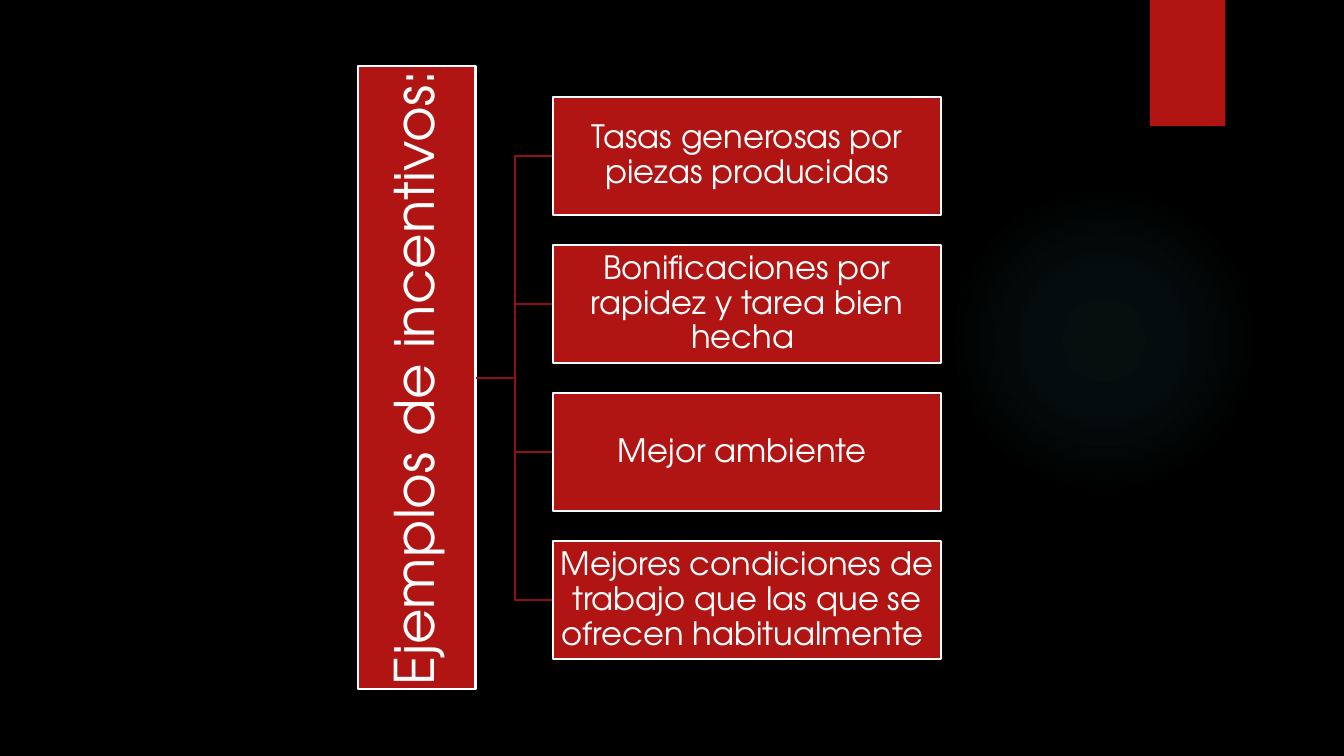
from lxml.etree import SubElement
from pptx import Presentation
from pptx.dml.color import RGBColor
from pptx.enum.shapes import MSO_CONNECTOR, MSO_SHAPE
from pptx.enum.text import MSO_ANCHOR, MSO_AUTO_SIZE, PP_ALIGN
from pptx.oxml import parse_xml
from pptx.oxml.ns import nsdecls, qn
from pptx.util import Cm, Pt

BLACK = RGBColor(0x00, 0x00, 0x00)
WHITE = RGBColor(0xFF, 0xFF, 0xFF)
RED = RGBColor(0xB0, 0x15, 0x13)
DARK = RGBColor(0x8D, 0x11, 0x0F)
TEAL = RGBColor(0x50, 0xB9, 0xC1)

FRAME = {"word_wrap": True, "auto_size": MSO_AUTO_SIZE.NONE,
         "vertical_anchor": MSO_ANCHOR.MIDDLE}
SIDES = ("margin_left", "margin_top", "margin_right", "margin_bottom")
PARA = {"alignment": PP_ALIGN.CENTER, "line_spacing": 0.9}
FONT = {"name": "TeX Gyre Adventor", "bold": False}


def assign(item, values):
    for key, value in values.items():
        setattr(item, key, value)


class Board:
    def __init__(self, slide):
        self.slide = slide
        self.shapes = slide.shapes
        slide.background.fill.solid()
        slide.background.fill.fore_color.rgb = BLACK

    def shape(self, kind, left, top, width, height):
        shape = self.shapes.add_shape(kind, Cm(left), Cm(top), Cm(width), Cm(height))
        shape.shadow.inherit = False
        shape.line.fill.background()
        return shape

    def paint(self, shape, edge=None):
        shape.fill.solid()
        shape.fill.fore_color.rgb = RED
        if edge is not None:
            shape.line.color.rgb = edge
            shape.line.width = Pt(1.5)

    def glow(self, left, top, size, stops):
        shape = self.shape(MSO_SHAPE.OVAL, left, top, size, size)
        marks = "".join(
            f'<a:gs pos="{place * 1000}"><a:srgbClr val="{TEAL}">'
            f'<a:alpha val="{alpha * 1000}"/></a:srgbClr></a:gs>'
            for place, alpha in stops)
        grad = parse_xml(
            f'<a:gradFill {nsdecls("a")}><a:gsLst>{marks}</a:gsLst><a:path path="circle">'
            '<a:fillToRect l="50000" t="50000" r="50000" b="50000"/></a:path></a:gradFill>')
        shape.element.spPr.find(qn("a:prstGeom")).addnext(grad)

    def label(self, shape, text, size, inset):
        frame = shape.text_frame
        assign(frame, FRAME | dict.fromkeys(SIDES, Cm(inset)))
        frame.text = text
        para = frame.paragraphs[0]
        assign(para, PARA)
        assign(para.font, FONT | {"size": Pt(size)})
        para.font.color.rgb = WHITE

    def box(self, text, left, top, width, height):
        shape = self.shape(MSO_SHAPE.RECTANGLE, left, top, width, height)
        self.paint(shape, WHITE)
        self.label(shape, text, 23, 0.05)

    def title(self, text, left, top, width, height):
        shape = self.shapes.title
        assign(shape, {"left": Cm(left), "top": Cm(top), "width": Cm(width),
                       "height": Cm(height), "rotation": 270})
        self.paint(shape, WHITE)
        self.label(shape, text, 39, 0.08)

    def link(self, left, top, right, end):
        line = self.shapes.add_connector(
            MSO_CONNECTOR.ELBOW, Cm(left), Cm(top), Cm(right), Cm(end))
        line.line.color.rgb = DARK
        line.line.width = Pt(1.5)
        SubElement(line.element.spPr, qn("a:effectLst"))


def main():
    deck = Presentation()
    deck.slide_width, deck.slide_height = Cm(33.87), Cm(19.05)
    board = Board(deck.slides.add_slide(deck.slide_layouts[5]))

    board.glow(23.9, 4.65, 7.82, [(0, 7), (36, 6), (69, 0)])
    board.paint(board.shape(MSO_SHAPE.RECTANGLE, 28.98, 0, 1.9, 3.18))

    items = ["Tasas generosas por piezas producidas",
             "Bonificaciones por rapidez y tarea bien hecha ",
             "Mejor ambiente ",
             "Mejores condiciones de trabajo que las que se ofrecen habitualmente "]
    left, top, width, height, step = 13.94, 2.44, 9.78, 2.97, 3.73
    start, middle = 12, 9.52
    tops = [top + step * i for i in range(len(items))]

    for y in tops:
        board.link(start, middle, left, y + height / 2)
    board.title("Ejemplos de incentivos: ", 2.65, 8.03, 15.7, height)
    for text, y in zip(items, tops):
        board.box(text, left, y, width, height)

    deck.save("out.pptx")


if __name__ == "__main__":
    main()
